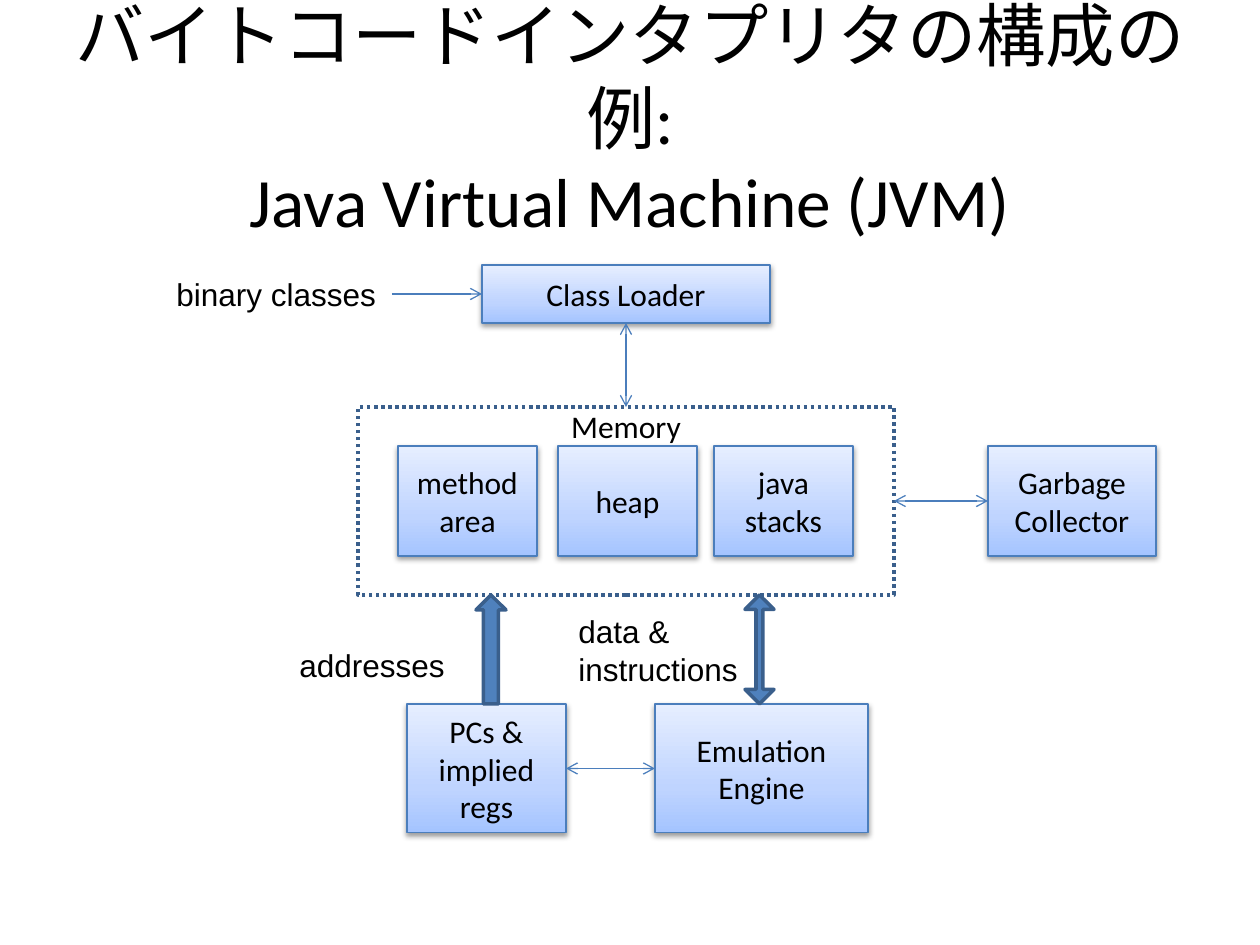
from lxml.etree import SubElement
from pptx import Presentation
from pptx.dml.color import RGBColor
from pptx.enum.dml import MSO_LINE
from pptx.enum.shapes import MSO_CONNECTOR, MSO_SHAPE
from pptx.enum.text import MSO_ANCHOR, PP_ALIGN
from pptx.oxml import parse_xml
from pptx.oxml.ns import nsdecls, qn
from pptx.util import Pt

PX = 914400 // 126
BLACK = RGBColor(0x00, 0x00, 0x00)
BLUE = RGBColor(0x4F, 0x81, 0xBD)
EDGE = RGBColor(0x4B, 0x7E, 0xBC)
DARK = RGBColor(0x3A, 0x5F, 0x8C)
STOPS = [
    (0, RGBColor(0xA4, 0xC4, 0xFF)),
    (35, RGBColor(0xBF, 0xD4, 0xFF)),
    (100, RGBColor(0xE6, 0xEE, 0xFF)),
]
TOP, LEFT, BOTTOM, RIGHT = range(4)

# All places are left, top, width, height in px
TITLE = "バイトコードインタプリタの構成の例:\vJava Virtual Machine (JVM)"
TITLE_AT = (63, 38, 1134, 157)
MEMORY_AT = (358, 407, 536, 188)
BOXES = {
    "loader": ("Class Loader", (482, 265, 288, 58)),
    "method": ("method area", (398, 446, 139, 110)),
    "heap": ("heap", (558, 446, 139, 110)),
    "stacks": ("java stacks", (714, 446, 139, 110)),
    "collector": ("Garbage Collector", (988, 446, 168, 110)),
    "engine": ("Emulation\nEngine", (655, 704, 213, 129)),
    "regs": ("PCs & implied regs", (407, 704, 159, 129)),
}
LABELS = {
    "addresses": ("addresses", (287, 640, 198, 50)),
    "data": ("data & instructions", (566, 606, 198, 89)),
    "classes": ("binary classes", (164, 269, 228, 50)),
}
ARROWS = [
    (MSO_SHAPE.UP_DOWN_ARROW, (745, 595, 29, 109), (0.5, 0.24)),
    (MSO_SHAPE.UP_ARROW, (476, 595, 30, 109), (0.5, 0.5)),
]
# from, side, to, side, both ends
LINKS = [
    ("loader", BOTTOM, "memory", TOP, True),
    ("regs", RIGHT, "engine", LEFT, True),
    ("memory", RIGHT, "collector", LEFT, True),
    ("classes", RIGHT, "loader", LEFT, False),
]


def emu(at):
    return [n * PX for n in at]


def write(shape, text, size=18, font="Calibri", align=PP_ALIGN.CENTER,
          anchor=MSO_ANCHOR.MIDDLE):
    frame = shape.text_frame
    frame.text = text
    frame.word_wrap = True
    frame.vertical_anchor = anchor
    for para in frame.paragraphs:
        para.alignment = align
        for run in para.runs:
            run.font.size = Pt(size)
            run.font.name = font
            run.font.color.rgb = BLACK


def add_text(slide, text, at, **style):
    box = slide.shapes.add_textbox(*emu(at))
    write(box, text, **style)
    return box


def add_flat(slide, kind, at, color, width):
    """Add a shape with a plain outline and no shadow."""
    shape = slide.shapes.add_shape(kind, *emu(at))
    shape.shadow.inherit = False
    shape.line.color.rgb = color
    shape.line.width = Pt(width)
    return shape


def shade(shape):
    """Give the shape the three-stop gradient and a soft shadow below."""
    shape.fill.gradient()
    grad = shape._element.spPr.find(qn("a:gradFill"))
    stops = "".join(
        f'<a:gs pos="{pos * 1000}"><a:srgbClr val="{color}"/></a:gs>'
        for pos, color in STOPS)
    new = parse_xml(
        f'<a:gradFill {nsdecls("a")} rotWithShape="1"><a:gsLst>{stops}</a:gsLst>'
        '<a:lin ang="16200000" scaled="0"/></a:gradFill>')
    grad.getparent().replace(grad, new)
    shape._element.spPr.find(qn("a:effectLst")).append(parse_xml(
        f'<a:outerShdw {nsdecls("a")} blurRad="40000" dist="20000" '
        'dir="5400000" rotWithShape="0"><a:srgbClr val="000000">'
        '<a:alpha val="38000"/></a:srgbClr></a:outerShdw>'))


def add_box(slide, text, at):
    box = add_flat(slide, MSO_SHAPE.RECTANGLE, at, EDGE, 0.75)
    shade(box)
    write(box, text)
    return box


def add_memory(slide):
    box = add_flat(slide, MSO_SHAPE.RECTANGLE, MEMORY_AT, DARK, 2)
    box.fill.background()
    box.line.dash_style = MSO_LINE.ROUND_DOT
    write(box, "Memory", anchor=MSO_ANCHOR.TOP)
    box.text_frame.margin_top = 0
    return box


def add_arrow(slide, kind, at, adjust):
    arrow = add_flat(slide, kind, at, DARK, 2)
    arrow.fill.solid()
    arrow.fill.fore_color.rgb = BLUE
    for i, value in enumerate(adjust):
        arrow.adjustments[i] = value


def add_link(slide, start, out, end, into, both):
    link = slide.shapes.add_connector(MSO_CONNECTOR.STRAIGHT, 0, 0, 0, 0)
    link.begin_connect(start, out)
    link.end_connect(end, into)
    link.line.color.rgb = EDGE
    link.line.width = Pt(0.75)
    line = link.line._get_or_add_ln()
    for tag in ("a:headEnd", "a:tailEnd") if both else ("a:tailEnd",):
        SubElement(line, qn(tag), type="arrow")
    SubElement(link._element.spPr, qn("a:effectLst"))


def main():
    deck = Presentation()
    deck.slide_width, deck.slide_height = emu((1260, 945))
    slide = deck.slides.add_slide(deck.slide_layouts[6])

    add_text(slide, TITLE, TITLE_AT, size=39.6)
    parts = {name: add_box(slide, *box) for name, box in BOXES.items()}
    parts["memory"] = add_memory(slide)
    for arrow in ARROWS:
        add_arrow(slide, *arrow)
    for name, label in LABELS.items():
        parts[name] = add_text(slide, *label, font="Arial",
                               align=PP_ALIGN.LEFT, anchor=MSO_ANCHOR.TOP)
    for start, out, end, into, both in LINKS:
        add_link(slide, parts[start], out, parts[end], into, both)
    deck.save("out.pptx")


if __name__ == "__main__":
    main()
